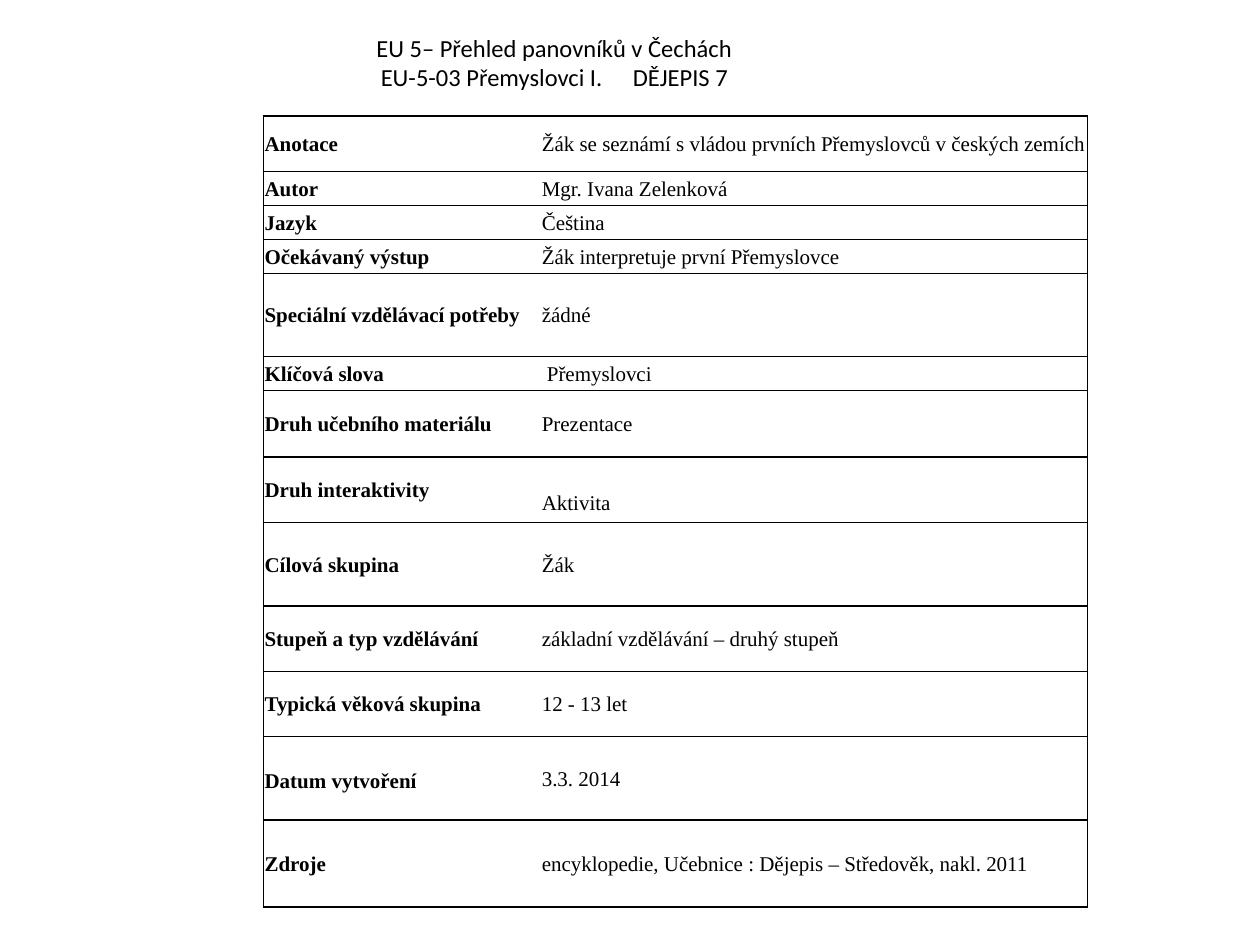
from lxml import etree
from pptx import Presentation
from pptx.dml.color import RGBColor
from pptx.enum.text import MSO_ANCHOR, PP_ALIGN
from pptx.oxml.ns import qn
from pptx.util import Inches, Pt

CENTER, LEFT = PP_ALIGN.CENTER, PP_ALIGN.LEFT
MIDDLE, BOTTOM = MSO_ANCHOR.MIDDLE, MSO_ANCHOR.BOTTOM
BLACK = "000000"
INSET = 0.01
COLUMN_WIDTHS = (2.2, 4.34)

TITLE_LINES = ("EU 5– Přehled panovníků v Čechách",
               "EU-5-03 Přemyslovci I.\tDĚJEPIS 7")
TITLE_FONT = {"name": "Calibri", "size": Pt(14), "bold": False}
LABEL_FONT = {"name": "Times New Roman", "size": Pt(12), "bold": True}
VALUE_FONT = {**LABEL_FONT, "bold": False}

# Label, value, row height
RECORD = (
    ("Anotace", "Žák se seznámí s vládou prvních Přemyslovců v českých zemích", 0.44),
    ("Autor", "Mgr. Ivana Zelenková", 0.27),
    ("Jazyk", "Čeština", 0.27),
    ("Očekávaný výstup", "Žák interpretuje první Přemyslovce", 0.27),
    ("Speciální vzdělávací potřeby", "žádné", 0.66),
    ("Klíčová slova", "Přemyslovci", 0.27),
    ("Druh učebního materiálu", "Prezentace", 0.53),
    ("Druh interaktivity", "Aktivita", 0.52),
    ("Cílová skupina", "Žák", 0.66),
    ("Stupeň a typ vzdělávání", "základní vzdělávání – druhý stupeň", 0.52),
    ("Typická věková skupina", "12 - 13 let", 0.52),
    ("Datum vytvoření", "3.3. 2014", 0.66),
    ("Zdroje", "encyklopedie, Učebnice : Dějepis – Středověk, nakl. 2011", 0.69),
)

# Cells whose text sits away from the usual place
CELL_EXCEPTIONS = {
    "Přemyslovci": {"margin_left": Inches(0.05)},
    "Aktivita": {"margin_top": Inches(0.21)},
    "Datum vytvoření": {"vertical_anchor": BOTTOM, "margin_bottom": Inches(0.21)},
}


def color(hex_value):
    return RGBColor.from_string(hex_value)


def apply_format(target, values):
    for attribute, value in values.items():
        setattr(target, attribute, value)


def write_paragraph(paragraph, text, font, alignment):
    paragraph.alignment = alignment
    run = paragraph.add_run()
    run.text = text
    apply_format(run.font, font)
    run.font.color.rgb = color(BLACK)


def set_borders(cell, drawn_sides):
    properties = cell._tc.get_or_add_tcPr()
    for side in "LRTB":
        line = etree.SubElement(properties, qn(f"a:ln{side}"), w=str(Pt(1)))
        if side in drawn_sides:
            fill = etree.SubElement(line, qn("a:solidFill"))
            etree.SubElement(fill, qn("a:srgbClr"), val=BLACK)
        else:
            etree.SubElement(line, qn("a:noFill"))


def add_title(slide, left, top, width, height):
    frame = slide.shapes.add_textbox(left, top, width, height).text_frame
    frame.word_wrap = True
    for index, line in enumerate(TITLE_LINES):
        paragraph = frame.add_paragraph() if index else frame.paragraphs[0]
        write_paragraph(paragraph, line, TITLE_FONT, CENTER)


def fill_cell(cell, text, font, drawn_sides):
    margins = {f"margin_{side}": Inches(INSET)
               for side in ("left", "right", "top", "bottom")}
    apply_format(cell, {**margins, "vertical_anchor": MIDDLE,
                        **CELL_EXCEPTIONS.get(text, {})})
    paragraph = cell.text_frame.paragraphs[0]
    paragraph.line_spacing = 1.07
    write_paragraph(paragraph, text, font, LEFT)
    set_borders(cell, drawn_sides)
    cell.fill.background()


def add_record_table(slide, left, top, width, height):
    table = slide.shapes.add_table(len(RECORD), len(COLUMN_WIDTHS),
                                   left, top, width, height).table
    apply_format(table, {"first_row": False, "horz_banding": False})
    for column, column_width in zip(table.columns, COLUMN_WIDTHS):
        column.width = Inches(column_width)
    for index, (label, value, row_height) in enumerate(RECORD):
        table.rows[index].height = Inches(row_height)
        fill_cell(table.cell(index, 0), label, LABEL_FONT, "LTB")
        fill_cell(table.cell(index, 1), value, VALUE_FONT, "RTB")


def main():
    presentation = Presentation()
    presentation.slide_width = Inches(10)
    presentation.slide_height = Inches(7.5)
    slide = presentation.slides.add_slide(presentation.slide_layouts[6])
    add_title(slide, Inches(1.3), Inches(0.21), Inches(6.2), Inches(0.57))
    add_record_table(slide, Inches(2.09), Inches(0.92), Inches(sum(COLUMN_WIDTHS)),
                     Inches(sum(row[2] for row in RECORD)))
    presentation.save("out.pptx")


if __name__ == "__main__":
    main()
